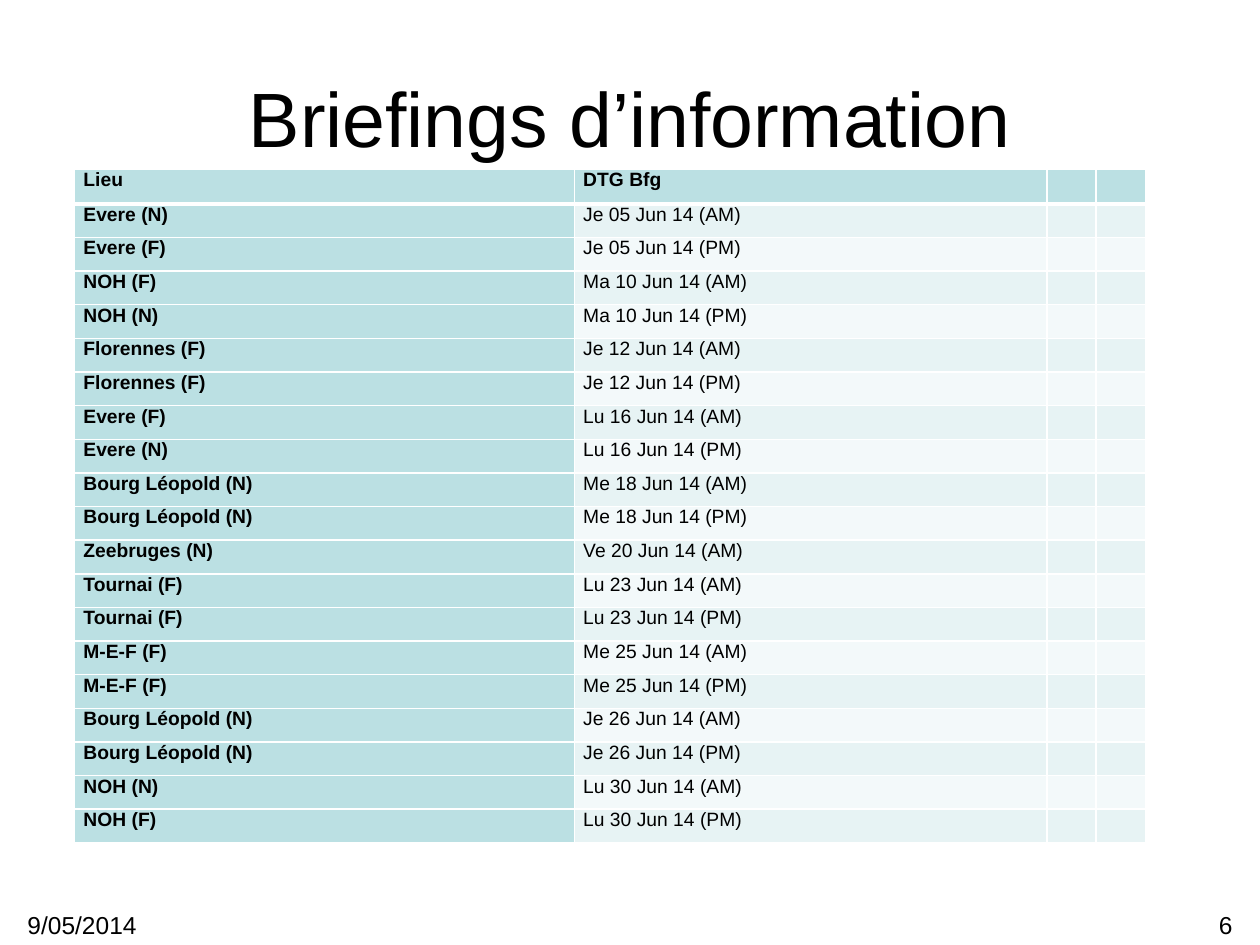
from dataclasses import dataclass

from lxml import etree
from pptx import Presentation
from pptx.dml.color import RGBColor
from pptx.enum import text
from pptx.oxml import ns
from pptx.util import Pt


@dataclass(frozen=True)
class Theme:
    font: str = "Arial"
    ink: str = "000000"
    rule: str = "FFFFFF"
    header: str = "BBE0E3"
    bands: tuple = ("E7F3F4", "F3F9FA")
    title_size: int = 44
    footer_size: int = 14
    table_size: int = 11


theme = Theme()


def write(frame, words, size, bold=False, align=text.PP_ALIGN.LEFT):
    paragraph = frame.paragraphs[0]
    paragraph.alignment = align
    if not words:
        # The end mark keeps an empty row from growing to the default type size.
        etree.SubElement(paragraph._p, ns.qn("a:endParaRPr"), sz=str(size * 100))
        return
    run = paragraph.add_run()
    run.text = words
    run.font.name = theme.font
    run.font.size = Pt(size)
    run.font.bold = bold
    run.font.color.rgb = RGBColor.from_string(theme.ink)


def rule_cell(cell, **widths):
    """Draw the cell's edges; keys are L, R, T, B and values are points."""
    properties = cell._tc.get_or_add_tcPr()
    for position, (edge, width) in enumerate(widths.items()):
        line = etree.Element(ns.qn(f"a:ln{edge}"), w=str(Pt(width)))
        fill = etree.SubElement(line, ns.qn("a:solidFill"))
        etree.SubElement(fill, ns.qn("a:srgbClr"), val=theme.rule)
        properties.insert(position, line)


briefings = [
    ("Evere (N)", "Je 05 Jun 14 (AM)"),
    ("Evere (F)", "Je 05 Jun 14 (PM)"),
    ("NOH (F)", "Ma 10 Jun 14 (AM)"),
    ("NOH (N)", "Ma 10 Jun 14 (PM)"),
    ("Florennes (F)", "Je 12 Jun 14 (AM)"),
    ("Florennes (F)", "Je 12 Jun 14 (PM)"),
    ("Evere (F)", "Lu 16 Jun 14 (AM)"),
    ("Evere (N)", "Lu 16 Jun 14 (PM)"),
    ("Bourg Léopold (N)", "Me 18 Jun 14 (AM)"),
    ("Bourg Léopold (N)", "Me 18 Jun 14 (PM)"),
    ("Zeebruges (N)", "Ve 20 Jun 14 (AM)"),
    ("Tournai (F)", "Lu 23 Jun 14 (AM)"),
    ("Tournai (F)", "Lu 23 Jun 14 (PM)"),
    ("M-E-F (F)", "Me 25 Jun 14 (AM)"),
    ("M-E-F (F)", "Me 25 Jun 14 (PM)"),
    ("Bourg Léopold (N)", "Je 26 Jun 14 (AM)"),
    ("Bourg Léopold (N)", "Je 26 Jun 14 (PM)"),
    ("NOH (N)", "Lu 30 Jun 14 (AM)"),
    ("NOH (F)", "Lu 30 Jun 14 (PM)"),
]

deck = Presentation()
deck.slide_width, deck.slide_height = Pt(720), Pt(540)
slide = deck.slides.add_slide(deck.slide_layouts[6])

# Title
title = slide.shapes.add_textbox(Pt(36), Pt(21.6), Pt(648), Pt(90)).text_frame
title.word_wrap = True
title.vertical_anchor = text.MSO_ANCHOR.MIDDLE
write(title, "Briefings d’information", theme.title_size, align=text.PP_ALIGN.CENTER)

# Schedule
rows = [("Lieu", "DTG Bfg"), *briefings]
column_widths = [285.6, 270, 28.1, 28.1]
header_height, row_height = 20, 19.22
schedule = slide.shapes.add_table(
    len(rows), len(column_widths), Pt(42.7), Pt(96.5),
    Pt(sum(column_widths)), Pt(header_height + row_height * len(briefings)),
).table
schedule.first_col = True
for column, width in zip(schedule.columns, column_widths):
    column.width = Pt(width)

for r, row in enumerate(rows):
    schedule.rows[r].height = Pt(row_height if r else header_height)
    for c, words in enumerate((*row, "", "")):
        cell = schedule.cell(r, c)
        heading = r == 0 or c == 0
        cell.margin_left = cell.margin_right = Pt(5)
        cell.margin_top = cell.margin_bottom = Pt(0)
        cell.fill.solid()
        cell.fill.fore_color.rgb = RGBColor.from_string(
            theme.header if heading else theme.bands[(r - 1) % 2])
        rule_cell(cell, L=1, R=1, T=3 if r == 1 else 1, B=1 if r else 3)
        write(cell.text_frame, words, theme.table_size, bold=heading)

# Footer
for left, words, align in [
    (8.64, "9/05/2014", text.PP_ALIGN.LEFT),
    (543.6, "6", text.PP_ALIGN.RIGHT),
]:
    footer = slide.shapes.add_textbox(Pt(left), Pt(516.24), Pt(167.8), Pt(37.4)).text_frame
    footer.word_wrap = True
    write(footer, words, theme.footer_size, align=align)

deck.save("out.pptx")
